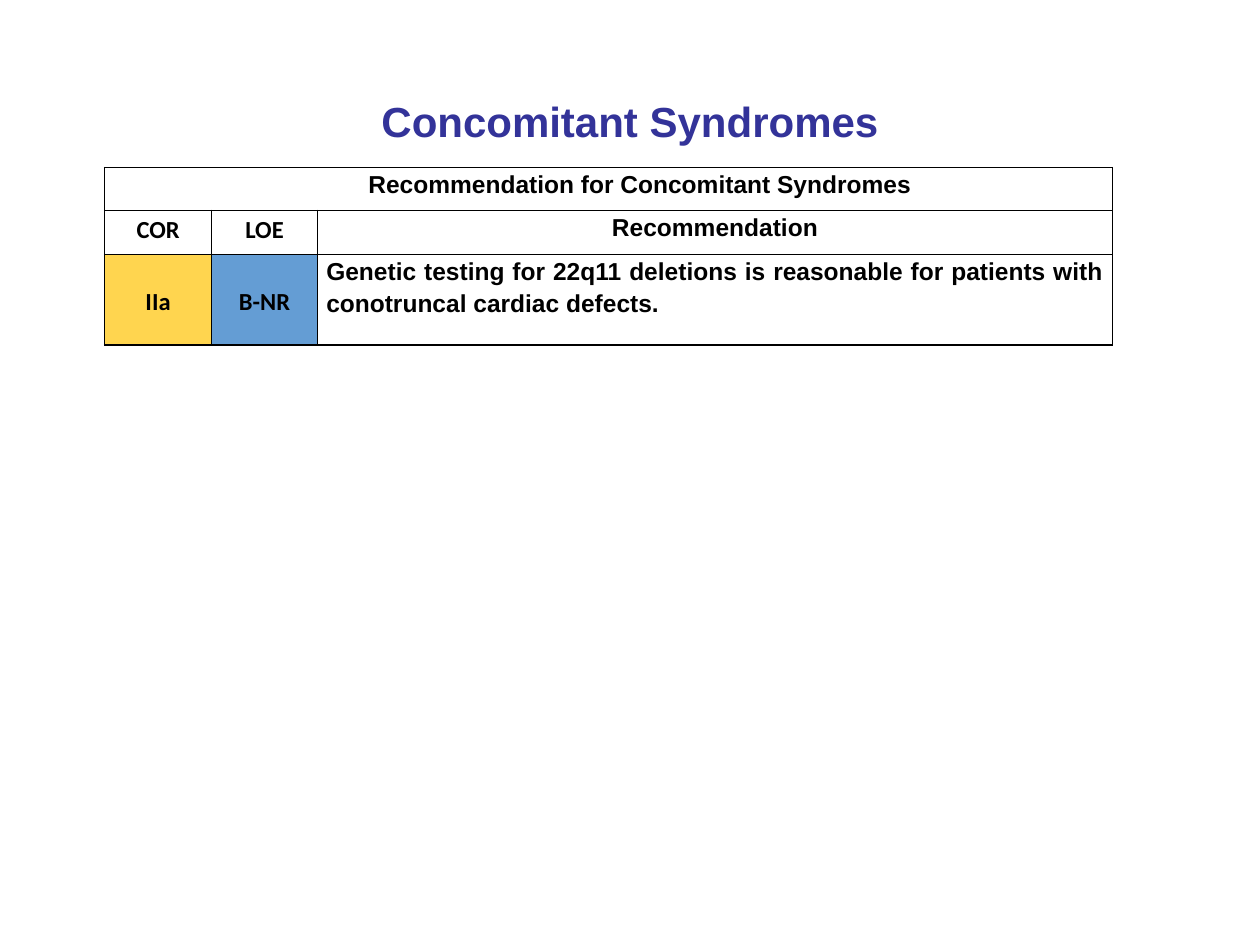
from dataclasses import dataclass

from lxml import etree
from pptx import Presentation
from pptx.dml.color import RGBColor
from pptx.enum.text import MSO_ANCHOR, PP_ALIGN
from pptx.oxml.ns import qn
from pptx.table import _Cell
from pptx.util import Inches, Pt

CENTER, JUSTIFY = PP_ALIGN.CENTER, PP_ALIGN.JUSTIFY
TOP, MIDDLE = MSO_ANCHOR.TOP, MSO_ANCHOR.MIDDLE
COLORS = {"title": "333399", "text": "000000", "border": "000000",
          "class": "FFD54F", "evidence": "649DD4"}
COLUMN_WIDTHS = (0.85, 0.84, 6.31)
ROW_HEIGHTS = (0.34, 0.35, 0.72)


@dataclass
class CellContent:
    row: int
    column: int
    text: str
    font: str = "Arial"
    align: PP_ALIGN = CENTER
    anchor: MSO_ANCHOR = TOP
    fill: str = ""


CONTENTS = (
    CellContent(0, 0, "\tRecommendation for Concomitant Syndromes"),
    CellContent(1, 0, "COR", "Calibri"),
    CellContent(1, 1, "LOE", "Calibri"),
    CellContent(1, 2, "Recommendation"),
    CellContent(2, 0, "IIa", "Calibri", anchor=MIDDLE, fill="class"),
    CellContent(2, 1, "B-NR", "Calibri", anchor=MIDDLE, fill="evidence"),
    CellContent(2, 2, "Genetic testing for 22q11 deletions is reasonable for "
                "patients with conotruncal cardiac defects.", align=JUSTIFY),
)


def style_paragraph(paragraph, font: str, size: float, color: str, align: PP_ALIGN) -> None:
    paragraph.alignment = align
    paragraph.font.name = font
    paragraph.font.size = Pt(size)
    paragraph.font.bold = True
    paragraph.font.color.rgb = RGBColor.from_string(COLORS[color])


def add_borders(cell: _Cell) -> None:
    properties = cell._tc.get_or_add_tcPr()
    for side in ("lnL", "lnR", "lnT", "lnB"):
        line = etree.SubElement(properties, qn(f"a:{side}"), w=str(Pt(1)))
        fill = etree.SubElement(line, qn("a:solidFill"))
        etree.SubElement(fill, qn("a:srgbClr"), val=COLORS["border"])


def fill_cell(cell: _Cell, content: CellContent) -> None:
    cell.vertical_anchor = content.anchor
    if content.fill:
        cell.fill.solid()
        cell.fill.fore_color.rgb = RGBColor.from_string(COLORS[content.fill])
    paragraph = cell.text_frame.paragraphs[0]
    paragraph.text = content.text
    paragraph.line_spacing = 1.15
    style_paragraph(paragraph, content.font, 14, "text", content.align)


def add_title(slide, text: str) -> None:
    frame = slide.shapes.add_textbox(Inches(0.5), Inches(0.33), Inches(9), Inches(1.25)).text_frame
    frame.word_wrap = True
    frame.vertical_anchor = MIDDLE
    frame.text = text
    style_paragraph(frame.paragraphs[0], "Arial", 24, "title", CENTER)


def add_recommendation_table(slide) -> None:
    table = slide.shapes.add_table(
        len(ROW_HEIGHTS), len(COLUMN_WIDTHS), Inches(0.83), Inches(1.33),
        Inches(sum(COLUMN_WIDTHS)), Inches(sum(ROW_HEIGHTS))).table
    table.first_row = table.horz_banding = False
    for column, width in zip(table.columns, COLUMN_WIDTHS):
        column.width = Inches(width)
    for row, height in zip(table.rows, ROW_HEIGHTS):
        row.height = Inches(height)
    for cell in table.iter_cells():
        cell.margin_left = cell.margin_right = Inches(0.07)
        cell.margin_top = cell.margin_bottom = 0
        add_borders(cell)
        cell.fill.background()
    table.cell(0, 0).merge(table.cell(0, len(COLUMN_WIDTHS) - 1))
    for content in CONTENTS:
        fill_cell(table.cell(content.row, content.column), content)


def main() -> None:
    presentation = Presentation()
    presentation.slide_width = Inches(10)
    presentation.slide_height = Inches(7.5)
    slide = presentation.slides.add_slide(presentation.slide_layouts[6])
    add_title(slide, "Concomitant Syndromes")
    add_recommendation_table(slide)
    presentation.save("out.pptx")


if __name__ == "__main__":
    main()
